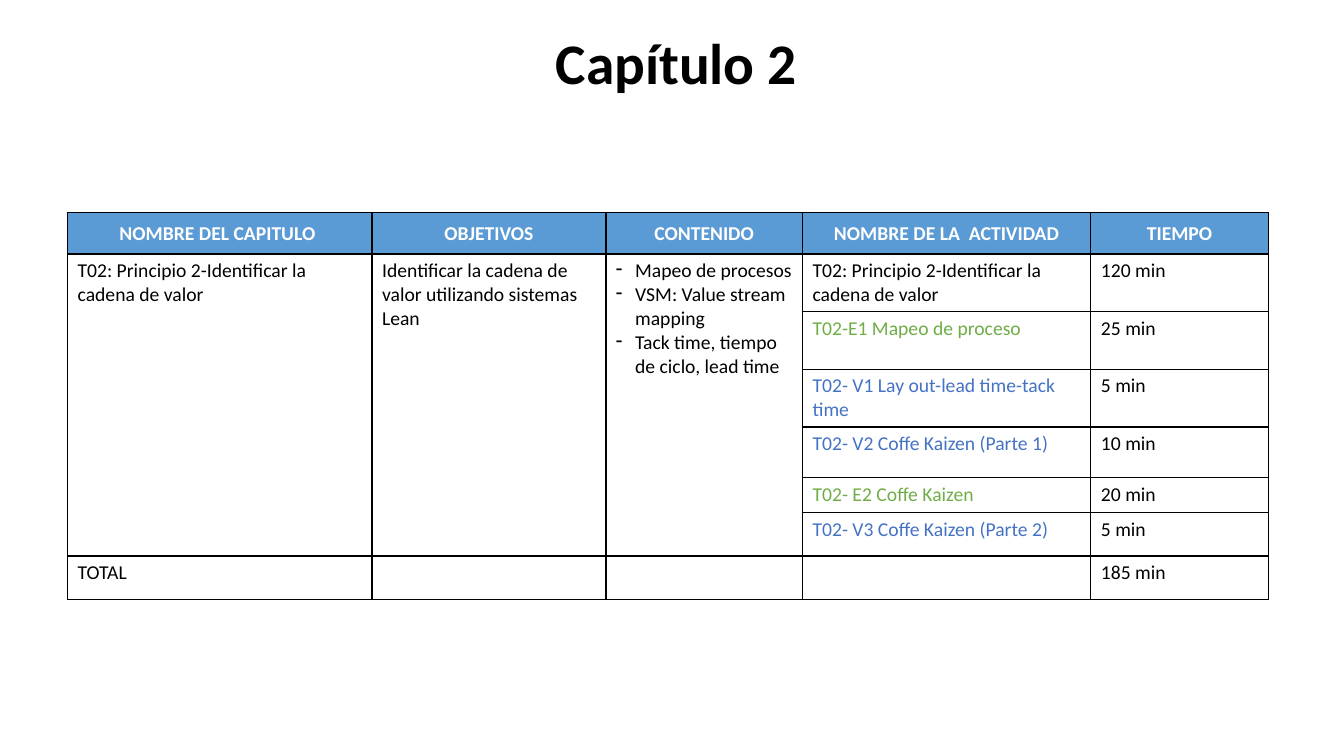
from pptx import Presentation
from pptx import util as u
from pptx.dml.color import RGBColor
from pptx.enum import text
from pptx.oxml import parse_xml
from pptx.oxml.ns import nsdecls

BLACK, WHITE, GREEN, BLUE = "000000", "FFFFFF", "70AD47", "4472C4"
HEAD = "5B9BD5"
WIDTHS = [3.02, 2.32, 1.95, 2.86, 1.76]
HEIGHTS = [0.41, 0.57, 0.57, 0.57, 0.5, 0.35, 0.43, 0.43]
TITLES = ["NOMBRE DEL CAPITULO ", "OBJETIVOS", "CONTENIDO",
          "NOMBRE DE LA  ACTIVIDAD", "TIEMPO"]
TOPIC = "T02: Principio 2-Identificar la cadena de valor"
GOAL = "Identificar la cadena de valor utilizando sistemas Lean"
THEMES = ["Mapeo de procesos", "VSM: Value stream mapping",
          "Tack time, tiempo de ciclo, lead time"]
TASKS = [
    (TOPIC, BLACK, "120 min"),
    ("T02-E1 Mapeo de proceso", GREEN, "25 min"),
    ("T02- V1 Lay out-lead time-tack time", BLUE, "5 min"),
    ("T02- V2 Coffe Kaizen (Parte 1)", BLUE, "10 min"),
    ("T02- E2 Coffe Kaizen", GREEN, "20 min"),
    ("T02- V3 Coffe Kaizen (Parte 2)", BLUE, "5 min"),
]


def paint(hue):
    return RGBColor.from_string(hue)


def style(frame, size, hue, bold=False, align=None):
    for para in frame.paragraphs:
        para.alignment = align
        for run in para.runs:
            font = run.font
            font.name, font.size, font.bold = "Calibri", u.Pt(size), bold
            font.color.rgb = paint(hue)


def dash(para):
    props = para._p.get_or_add_pPr()
    props.set("marL", str(u.Inches(0.19)))
    props.set("indent", str(-u.Inches(0.19)))
    props.append(parse_xml(f'<a:buChar {nsdecls("a")} char="-"/>'))


def frame_cell(cell, fill):
    cell.fill.solid()
    cell.fill.fore_color.rgb = paint(fill)
    props = cell._tc.get_or_add_tcPr()
    # Borders come before the fill
    for spot, side in enumerate("LRTB"):
        props.insert(spot, parse_xml(
            f'<a:ln{side} {nsdecls("a")} w="{u.Pt(1)}"><a:solidFill>'
            f'<a:srgbClr val="{BLACK}"/></a:solidFill></a:ln{side}>'))


def put(cell, words, hue=BLACK):
    cell.text_frame.text = words
    style(cell.text_frame, 14, hue)


def add_title(slide, words):
    box = slide.shapes.add_textbox(
        u.Inches(0.11), u.Inches(0.3), u.Inches(13.33), u.Inches(1.31))
    frame = box.text_frame
    frame.word_wrap = True
    frame.text = words
    frame.paragraphs[0].line_spacing = 0.9
    style(frame, 41, BLACK, True, text.PP_ALIGN.CENTER)


def add_plan(slide):
    table = slide.shapes.add_table(
        len(HEIGHTS), len(WIDTHS), u.Inches(0.67), u.Inches(2.11),
        u.Inches(sum(WIDTHS)), u.Inches(sum(HEIGHTS))).table
    for col, width in zip(table.columns, WIDTHS):
        col.width = u.Inches(width)
    for row, height in zip(table.rows, HEIGHTS):
        row.height = u.Inches(height)
    for r in range(len(HEIGHTS)):
        for c in range(len(WIDTHS)):
            frame_cell(table.cell(r, c), WHITE if r else HEAD)

    # Header
    for c, words in enumerate(TITLES):
        cell = table.cell(0, c)
        cell.text_frame.text = words
        cell.vertical_anchor = text.MSO_ANCHOR.MIDDLE
        style(cell.text_frame, 14, WHITE, True, text.PP_ALIGN.CENTER)

    # Chapter columns, merged over all activities
    for c, words in enumerate([TOPIC, GOAL, "\n".join(THEMES)]):
        cell = table.cell(1, c)
        cell.merge(table.cell(len(TASKS), c))
        put(cell, words)
    for para in table.cell(1, 2).text_frame.paragraphs:
        dash(para)

    # Activities and total
    for r, (task, hue, time) in enumerate(TASKS, 1):
        put(table.cell(r, 3), task, hue)
        put(table.cell(r, 4), time)
    last = len(HEIGHTS) - 1
    put(table.cell(last, 0), "TOTAL")
    put(table.cell(last, 4), "185 min")


def main():
    deck = Presentation()
    deck.slide_width, deck.slide_height = u.Inches(13.33), u.Inches(7.5)
    slide = deck.slides.add_slide(deck.slide_layouts[6])
    add_plan(slide)
    add_title(slide, "Capítulo 2 ")
    deck.save("out.pptx")


if __name__ == "__main__":
    main()
